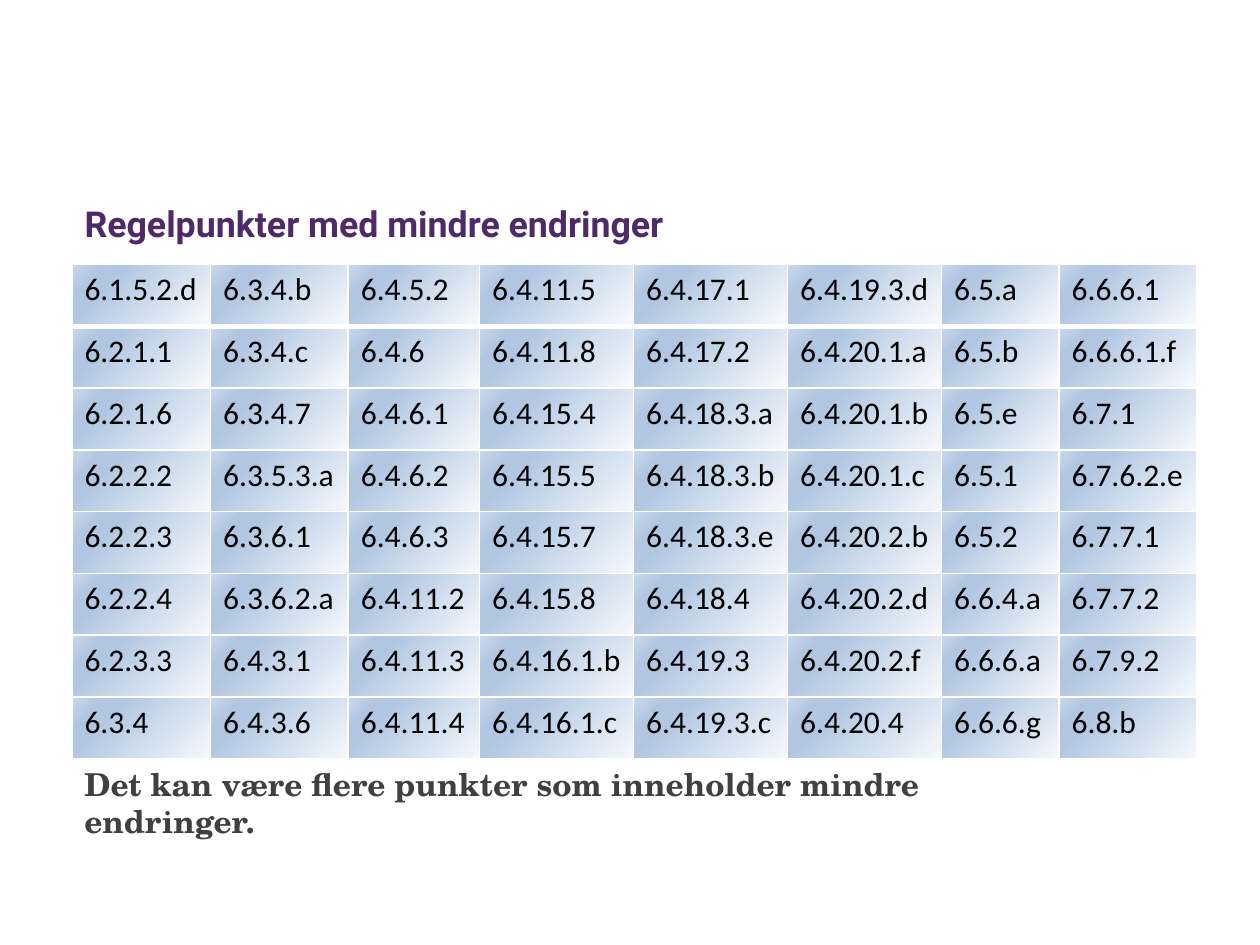
from lxml import etree
from pptx import Presentation
from pptx.dml.color import RGBColor
from pptx.enum.text import MSO_ANCHOR, MSO_AUTO_SIZE, PP_ALIGN
from pptx.oxml.ns import qn
from pptx.util import Pt

TOP = MSO_ANCHOR.TOP
NO_AUTOFIT = MSO_AUTO_SIZE.NONE
LEFT_ALIGN = PP_ALIGN.LEFT

PURPLE = RGBColor(0x4E, 0x2A, 0x68)
GREY = RGBColor(0x40, 0x40, 0x40)
BLACK = RGBColor(0x00, 0x00, 0x00)
WHITE = RGBColor(0xFF, 0xFF, 0xFF)
PALE_BLUE = RGBColor(0xF6, 0xF9, 0xFC)
MID_BLUE = RGBColor(0xB0, 0xC6, 0xE1)
LIGHT_BLUE = RGBColor(0xCA, 0xD9, 0xEB)

LEFT = 41.1
ROW_HEIGHT = 35.3
COLUMN_WIDTHS = [79.2, 78.7, 75.1, 88, 88, 88, 67.1, 78.7]

RULES = [
    ["6.1.5.2.d", "6.3.4.b", "6.4.5.2", "6.4.11.5", "6.4.17.1", "6.4.19.3.d", "6.5.a", "6.6.6.1"],
    ["6.2.1.1", "6.3.4.c", "6.4.6", "6.4.11.8", "6.4.17.2", "6.4.20.1.a", "6.5.b", "6.6.6.1.f"],
    ["6.2.1.6", "6.3.4.7", "6.4.6.1", "6.4.15.4", "6.4.18.3.a", "6.4.20.1.b", "6.5.e", "6.7.1"],
    ["6.2.2.2", "6.3.5.3.a", "6.4.6.2", "6.4.15.5", "6.4.18.3.b", "6.4.20.1.c", "6.5.1", "6.7.6.2.e"],
    ["6.2.2.3", "6.3.6.1", "6.4.6.3", "6.4.15.7", "6.4.18.3.e", "6.4.20.2.b", "6.5.2", "6.7.7.1"],
    ["6.2.2.4", "6.3.6.2.a", "6.4.11.2", "6.4.15.8", "6.4.18.4", "6.4.20.2.d", "6.6.4.a", "6.7.7.2"],
    ["6.2.3.3", "6.4.3.1", "6.4.11.3", "6.4.16.1.b", "6.4.19.3", "6.4.20.2.f", "6.6.6.a", "6.7.9.2"],
    ["6.3.4", "6.4.3.6", "6.4.11.4", "6.4.16.1.c", "6.4.19.3.c", "6.4.20.4", "6.6.6.g", "6.8.b"],
]


def write_text(frame, text, *, size, font, color, bold=False):
    frame.word_wrap = True
    frame.auto_size = NO_AUTOFIT
    frame.vertical_anchor = TOP
    format_paragraph(frame, text, size=size, font=font, color=color, bold=bold)


def format_paragraph(frame, text, *, size, font, color, bold=False):
    paragraph = frame.paragraphs[0]
    paragraph.alignment = LEFT_ALIGN
    run = paragraph.add_run()
    run.text = text
    run.font.size = Pt(size)
    run.font.name = font
    run.font.bold = bold
    run.font.color.rgb = color


def add_element(parent, tag, **attributes):
    values = {key: str(value) for key, value in attributes.items()}
    return etree.SubElement(parent, qn(tag), values)


def add_border(properties, tag, width):
    line = add_element(properties, tag, w=Pt(width))
    fill = add_element(line, "a:solidFill")
    add_element(fill, "a:srgbClr", val=WHITE)


def add_radial_fill(properties, first_stop):
    """Fill a cell with a gradient centred on its bottom right corner."""
    gradient = add_element(properties, "a:gradFill", rotWithShape=1)
    stops = add_element(gradient, "a:gsLst")
    for percent, color in [(first_stop, PALE_BLUE), (74, MID_BLUE),
                           (83, MID_BLUE), (100, LIGHT_BLUE)]:
        stop = add_element(stops, "a:gs", pos=percent * 1000)
        add_element(stop, "a:srgbClr", val=color)
    circle = add_element(gradient, "a:path", path="circle")
    add_element(circle, "a:fillToRect", l=100000, t=100000)


def add_rule_table(slide, top):
    rows, columns = len(RULES), len(COLUMN_WIDTHS)
    table = slide.shapes.add_table(
        rows, columns, Pt(LEFT), Pt(top),
        Pt(sum(COLUMN_WIDTHS)), Pt(rows * ROW_HEIGHT)).table
    table.first_row = False
    table.horz_banding = False
    for column, width in zip(table.columns, COLUMN_WIDTHS):
        column.width = Pt(width)
    for index, rules in enumerate(RULES):
        table.rows[index].height = Pt(ROW_HEIGHT)
        # The line under the first row is thicker than the rest
        top_width = 3 if index == 1 else 1
        bottom_width = 3 if index == 0 else 1
        for cell, rule in zip(table.rows[index].cells, rules):
            format_paragraph(cell.text_frame, rule, size=18, font="Calibri", color=BLACK)
            properties = cell._tc.get_or_add_tcPr()
            for tag, width in [("a:lnL", 1), ("a:lnR", 1),
                               ("a:lnT", top_width), ("a:lnB", bottom_width)]:
                add_border(properties, tag, width)
            add_radial_fill(properties, 3 if index < 2 else 0)


def main():
    presentation = Presentation()
    presentation.slide_width = Pt(720)
    presentation.slide_height = Pt(540)
    slide = presentation.slides.add_slide(presentation.slide_layouts[5])

    # Heading
    heading = slide.shapes.title
    heading.left, heading.top = Pt(LEFT), Pt(111.6)
    heading.width, heading.height = Pt(643), Pt(28.8)
    write_text(heading.text_frame, "Regelpunkter med mindre endringer",
               size=20.4, font="Roboto", color=PURPLE, bold=True)

    # Rule numbers
    add_rule_table(slide, top=151.2)

    # Closing remark
    remark = slide.shapes.add_textbox(Pt(LEFT), Pt(433.4), Pt(514), Pt(59.8))
    write_text(remark.text_frame,
               "Det kan være flere punkter som inneholder mindre endringer.",
               size=18, font="TeX Gyre Schola", color=GREY, bold=True)

    presentation.save("out.pptx")


if __name__ == "__main__":
    main()
